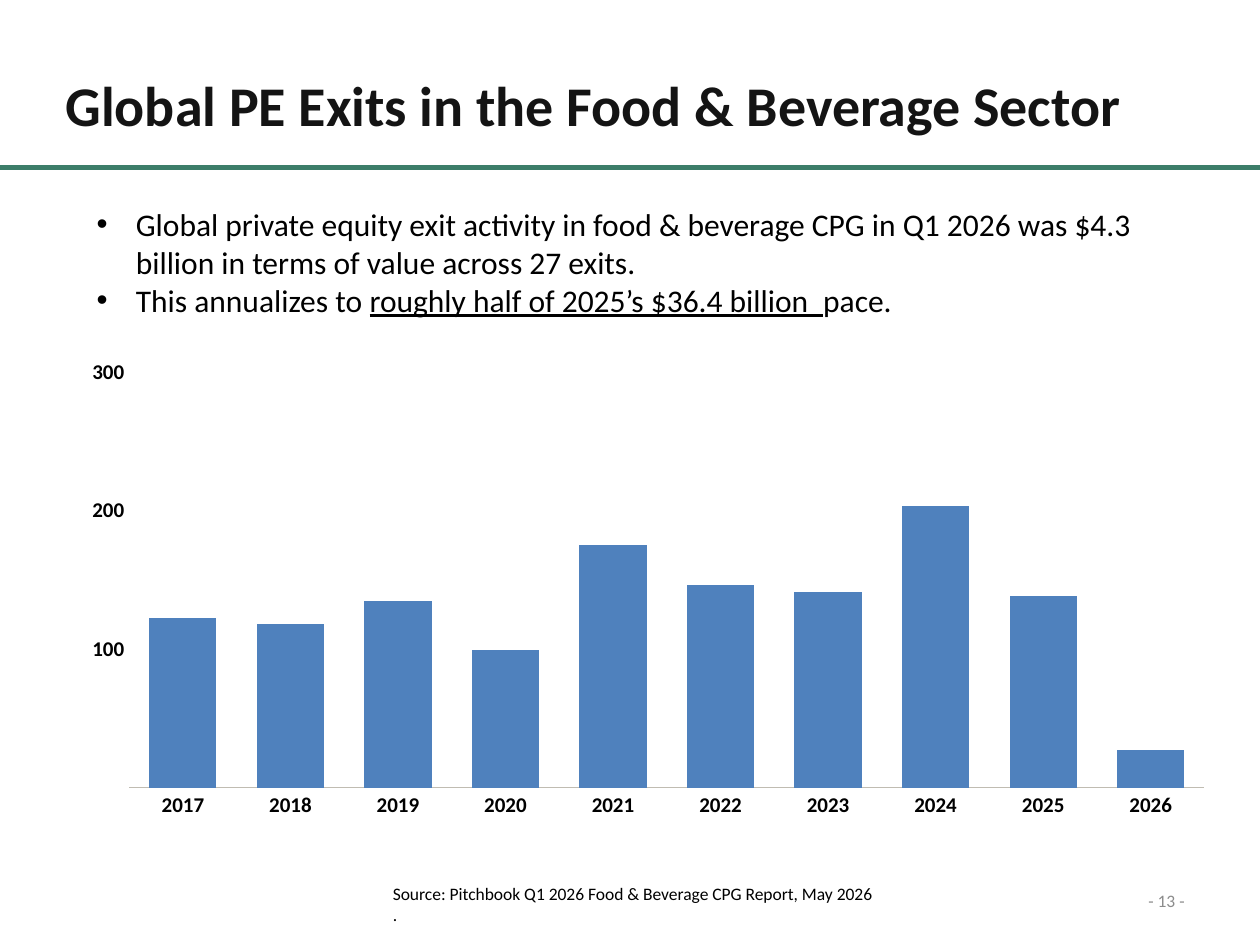
import pptx
import pptx.chart.data
import pptx.dml.color
import pptx.enum.chart
import pptx.enum.shapes
import pptx.enum.text
import pptx.oxml
import pptx.oxml.ns
import pptx.util
from pptx.util import Cm

FONT = "Calibri"
COLORS = {
    "title": "141414",
    "text": "000000",
    "page": "8C8C8C",
    "rule": "3C7D69",
    "bar": "4F81BD",
    "axis": "C0BCB2",
}
EXITS = {
    "2017": 122, "2018": 118, "2019": 135, "2020": 99, "2021": 175,
    "2022": 146, "2023": 141, "2024": 203, "2025": 138, "2026": 27,
}
# Each paragraph is a list of (text, underlined) runs
BULLETS = [
    [("Global private equity exit activity in food & beverage CPG in Q1 2026 "
      "was $4.3 billion in terms of value across 27 exits.", False)],
    [("This annualizes to ", False),
     ("roughly half of 2025’s $36.4 billion  ", True),
     ("pace.", False)],
]
SOURCE = [
    [("Source: Pitchbook Q1 2026 Food & Beverage CPG Report, May 2026", False)],
    [(".", False)],
]


def rgb(name):
    return pptx.dml.color.RGBColor.from_string(COLORS[name])


def style_font(font, size, color, bold=False):
    font.name = FONT
    font.size = pptx.util.Pt(size)
    font.bold = bold
    font.color.rgb = rgb(color)


def add_bullet(paragraph, indent):
    properties = paragraph._p.get_or_add_pPr()
    properties.set("marL", str(indent))
    properties.set("indent", str(-indent))
    for tag, name, value in (("a:buFont", "typeface", "Arial"), ("a:buChar", "char", "•")):
        element = pptx.oxml.xmlchemy.OxmlElement(tag)
        element.set(name, value)
        properties.append(element)


def add_text(slide, box, paragraphs, size, color, bold=False, bullets=False,
             wrap=True, align=None, anchor=None):
    shape = slide.shapes.add_textbox(*box)
    frame = shape.text_frame
    frame.word_wrap = wrap
    frame.vertical_anchor = anchor
    for index, runs in enumerate(paragraphs):
        paragraph = frame.add_paragraph() if index else frame.paragraphs[0]
        if bullets:
            add_bullet(paragraph, Cm(0.79))
        paragraph.alignment = align
        for text, underlined in runs:
            run = paragraph.add_run()
            run.text = text
            style_font(run.font, size, color, bold)
            if underlined:
                run.font.underline = True


def add_rule(slide, top, width):
    line = slide.shapes.add_connector(
        pptx.enum.shapes.MSO_CONNECTOR.STRAIGHT, 0, top, width, top)
    line.line.color.rgb = rgb("rule")
    line.line.width = pptx.util.Pt(3)
    line._element.spPr.append(pptx.oxml.xmlchemy.OxmlElement("a:effectLst"))


def set_plot_layout(chart, x, y, w, h):
    plot_area = chart._chartSpace.chart.plotArea
    for old in plot_area.findall(pptx.oxml.ns.qn("c:layout")):
        plot_area.remove(old)
    settings = [("layoutTarget", "inner"), ("xMode", "edge"), ("yMode", "edge"),
                ("x", x), ("y", y), ("w", w), ("h", h)]
    children = "".join(f'<c:{tag} val="{value}"/>' for tag, value in settings)
    plot_area.insert(0, pptx.oxml.parse_xml(
        f'<c:layout {pptx.oxml.ns.nsdecls("c")}>'
        f"<c:manualLayout>{children}</c:manualLayout></c:layout>"))


def add_exit_chart(slide, box):
    data = pptx.chart.data.CategoryChartData()
    data.categories = list(EXITS)
    data.add_series("Series 1", list(EXITS.values()))
    chart = slide.shapes.add_chart(
        pptx.enum.chart.XL_CHART_TYPE.COLUMN_STACKED, *box, data).chart
    chart.has_legend = False
    chart.has_title = False
    style_font(chart.font, 12, "text", True)

    # Bars
    plot = chart.plots[0]
    plot.gap_width = 60
    plot.overlap = 100
    plot.vary_by_categories = False
    fill = plot.series[0].format.fill
    fill.solid()
    fill.fore_color.rgb = rgb("bar")

    # Axes
    for axis in (chart.category_axis, chart.value_axis):
        axis.major_tick_mark = pptx.enum.chart.XL_TICK_MARK.NONE
        axis.minor_tick_mark = pptx.enum.chart.XL_TICK_MARK.NONE
        axis.has_major_gridlines = False
        style_font(axis.tick_labels.font, 12, "text", True)
    chart.category_axis.format.line.color.rgb = rgb("axis")
    chart.category_axis.format.line.width = pptx.util.Pt(0.5)
    values = chart.value_axis
    values.format.line.fill.background()
    values.minimum_scale, values.maximum_scale, values.major_unit = 0, 300, 100
    values.tick_labels.number_format = "#,##0;;"
    values.tick_labels.number_format_is_linked = False
    set_plot_layout(chart, 0.043, 0.031, 0.957, 0.844)


def main():
    presentation = pptx.Presentation()
    presentation.slide_width = Cm(25.4)
    presentation.slide_height = Cm(19.05)
    slide = presentation.slides.add_slide(presentation.slide_layouts[6])

    # Heading
    add_rule(slide, Cm(3.38), presentation.slide_width)
    add_text(slide, (Cm(1.07), Cm(1.3), Cm(22), Cm(1.63)),
             [[("Global PE Exits in the Food & Beverage Sector", False)]],
             32, "title", bold=True, wrap=False)

    # Footer
    add_text(slide, (Cm(22.02), Cm(17.65), Cm(2.11), Cm(1.02)),
             [[("- 13 -", False)]], 10, "page",
             align=pptx.enum.text.PP_ALIGN.RIGHT,
             anchor=pptx.enum.text.MSO_ANCHOR.MIDDLE)
    add_text(slide, (Cm(7.67), Cm(17.68), Cm(15.39), Cm(1.12)), SOURCE, 10, "text")

    # Key points and chart
    add_text(slide, (Cm(1.7), Cm(4.01), Cm(22.66), Cm(2.57)), BULLETS, 18, "text",
             bullets=True)
    add_exit_chart(slide, (Cm(1.63), Cm(7.19), Cm(22.66), Cm(9.93)))

    presentation.save("out.pptx")


if __name__ == "__main__":
    main()
